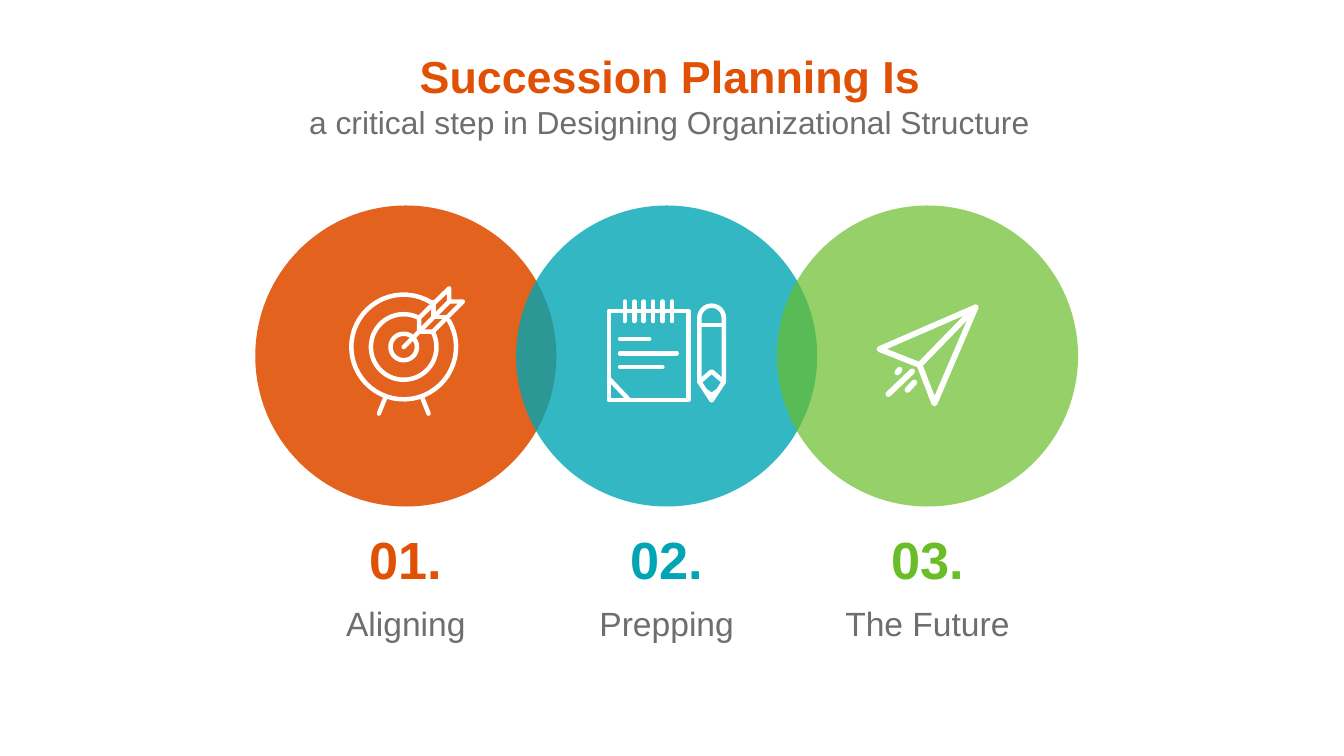
from math import cos, radians, sin

from pptx import Presentation
from pptx.dml.color import RGBColor
from pptx.enum.shapes import MSO_SHAPE as Shape
from pptx.enum.text import MSO_ANCHOR as Anchor, PP_ALIGN as Align
from pptx.oxml.ns import qn
from pptx.oxml.xmlchemy import OxmlElement
from pptx.util import Cm, Pt

ORANGE, TEAL, GREEN = "E05106", "00A5B5", "69BE28"
GREY, WHITE = "6C6E70", "FFFFFF"
FIRST_CENTRE, CENTRE_Y, PITCH, DIAMETER = 7.67, 6.73, 4.93, 5.69


def color(value):
    """Turn a hex string into a colour."""
    return RGBColor.from_string(value)


def arc(x, y, radius, start=0, end=360):
    """Return points along an arc, in millimetres and degrees."""
    steps = 48
    angles = [radians(start + (end - start) * i / steps) for i in range(steps + 1)]
    return [(x + radius * cos(a), y + radius * sin(a)) for a in angles]


def target_strokes():
    """Return the strokes of a target with an arrow."""
    return [
        arc(-0.4, -1.7, 9.9, -30, 302),
        arc(-0.4, -1.7, 6.2, -26, 296),
        arc(-0.4, -1.7, 2.5, -45, 315),
        [(-0.4, -1.7), (8.1, -10.2)],
        [(2.5, -4.6), (2.5, -7.2), (8.2, -12.8), (8.2, -10.3),
         (10.8, -10.3), (5.1, -4.6), (2.5, -4.6)],
        [(5.2, -10.2), (5.2, -7.4), (7.8, -7.4)],
        [(-3.9, 7.9), (-5.1, 10.9)],
        [(3.1, 7.9), (4.3, 10.9)],
    ]


def notepad_strokes():
    """Return the strokes of a ringed notepad."""
    sheet = [(-10.9, -8.5), (4.1, -8.5), (4.1, 8.3), (-10.9, 8.3), (-10.9, -8.5)]
    rings = [[(-7.9 + 1.78 * i, -10.3), (-7.9 + 1.78 * i, -6.6)] for i in range(6)]
    rows = [[(-8.8, y), (end, y)] for y, end in [(-3.2, -3.3), (-0.5, 1.9), (2.1, -0.8)]]
    return [sheet, [(-10.9, 4.3), (-7.1, 8.3)], *rings, *rows]


def pencil_strokes():
    """Return the strokes of an upright pencil."""
    outline = arc(8.5, -7.2, 2.3, 180, 360) + [(10.8, 4.9), (8.5, 8.4), (6.2, 4.9), (6.2, -7.2)]
    return [
        outline,
        [(6.2, -5.9), (10.8, -5.9)],
        [(6.2, 4.9), (8.5, 2.9), (10.8, 4.9)],
        [(7.5, 6.7), (8.5, 7.4), (9.5, 6.7)],
    ]


def plane_strokes():
    """Return the strokes of a paper plane with its trail."""
    tip, fold = (9.1, -9.2), (-1.5, 1.7)
    return [
        [tip, (-9.1, -1.3), fold, (1.3, 9), tip],
        [fold, tip],
        [(-2.9, 2.9), (-7.4, 7.2)],
        [(-5.3, 2.6), (-5.7, 3.1)],
        [(-2.5, 5), (-3.8, 6.4)],
    ]


def add_icon(shapes, centre, strokes, weight):
    """Draw millimetre strokes around a circle's centre as one white outline."""
    def place(point):
        return Cm(centre + point[0] / 10), Cm(CENTRE_Y + point[1] / 10)

    builder = shapes.build_freeform(*place(strokes[0][0]))
    for stroke in strokes:
        builder.move_to(*place(stroke[0]))
        builder.add_line_segments([place(point) for point in stroke[1:]], close=False)
    icon = builder.convert_to_shape()
    icon.shadow.inherit = False
    icon.fill.background()
    icon.line.color.rgb = color(WHITE)
    icon.line.width = Pt(weight)
    outline = icon.element.spPr.find(qn("a:ln"))
    outline.set("cap", "rnd")
    outline.append(OxmlElement("a:round"))


def add_circle(page, centre, fill, opacity):
    """Add a translucent circle."""
    radius = DIAMETER / 2
    circle = page.shapes.add_shape(Shape.OVAL, Cm(centre - radius), Cm(CENTRE_Y - radius),
                                   Cm(DIAMETER), Cm(DIAMETER))
    circle.shadow.inherit = False
    circle.fill.solid()
    circle.fill.fore_color.rgb = color(fill)
    circle.line.fill.background()
    alpha = OxmlElement("a:alpha")
    alpha.set("val", str(opacity * 1000))
    circle.element.spPr.find(qn("a:solidFill"))[0].append(alpha)


def write(box, text, size, ink, inset, bold=False, wrap=True):
    """Write one centred line in a box."""
    frame = box.text_frame
    layout = {"word_wrap": wrap, "vertical_anchor": Anchor.TOP, "margin_top": Cm(inset),
              "margin_bottom": 0, "margin_left": 0, "margin_right": 0}
    for name, value in layout.items():
        setattr(frame, name, value)
    para = frame.paragraphs[0]
    para.alignment = Align.CENTER
    span = para.add_run()
    span.text = text
    for name, value in {"name": "Arial", "size": Pt(size), "bold": bold}.items():
        setattr(span.font, name, value)
    span.font.color.rgb = color(ink)


def add_text(page, centre, top, width, height, *content, **options):
    """Add a text box centred on a given x."""
    box = page.shapes.add_textbox(Cm(centre - width / 2), Cm(top), Cm(width), Cm(height))
    write(box, *content, **options)


def add_title(page, text):
    """Place and fill the title placeholder."""
    title = page.shapes.title
    place = {"left": 1.04, "top": 0.79, "width": 23.24, "height": 1.02}
    for name, value in place.items():
        setattr(title, name, Cm(value))
    write(title, text, 24, ORANGE, 0.13, bold=True)


def main():
    """Build the slide and save it."""
    deck = Presentation()
    deck.slide_width, deck.slide_height = Cm(25.4), Cm(14.29)
    page = deck.slides.add_slide(deck.slide_layouts[5])
    add_title(page, "Succession Planning Is")
    add_text(page, 12.66, 1.83, 23.24, 0.81,
             "a critical step in Designing Organizational Structure", 17, GREY, 0.12)
    steps = [
        ("Aligning", ORANGE, 90, [target_strokes()], 2.4),
        ("Prepping", TEAL, 80, [notepad_strokes(), pencil_strokes()], 2.4),
        ("The Future", GREEN, 70, [plane_strokes()], 3.1),
    ]
    for index, (label, ink, opacity, icons, weight) in enumerate(steps):
        centre = FIRST_CENTRE + PITCH * index
        add_circle(page, centre, ink, opacity)
        add_text(page, centre, 9.88, 1.6, 1.3, f"{index + 1:02}.", 28, ink, 0.08,
                 bold=True, wrap=False)
        add_text(page, centre, 11.25, 3.96, 1.02, label, 18, GREY, 0.15)
        shapes = page.shapes.add_group_shape().shapes if len(icons) > 1 else page.shapes
        for strokes in icons:
            add_icon(shapes, centre, strokes, weight)
    deck.save("out.pptx")


if __name__ == "__main__":
    main()
